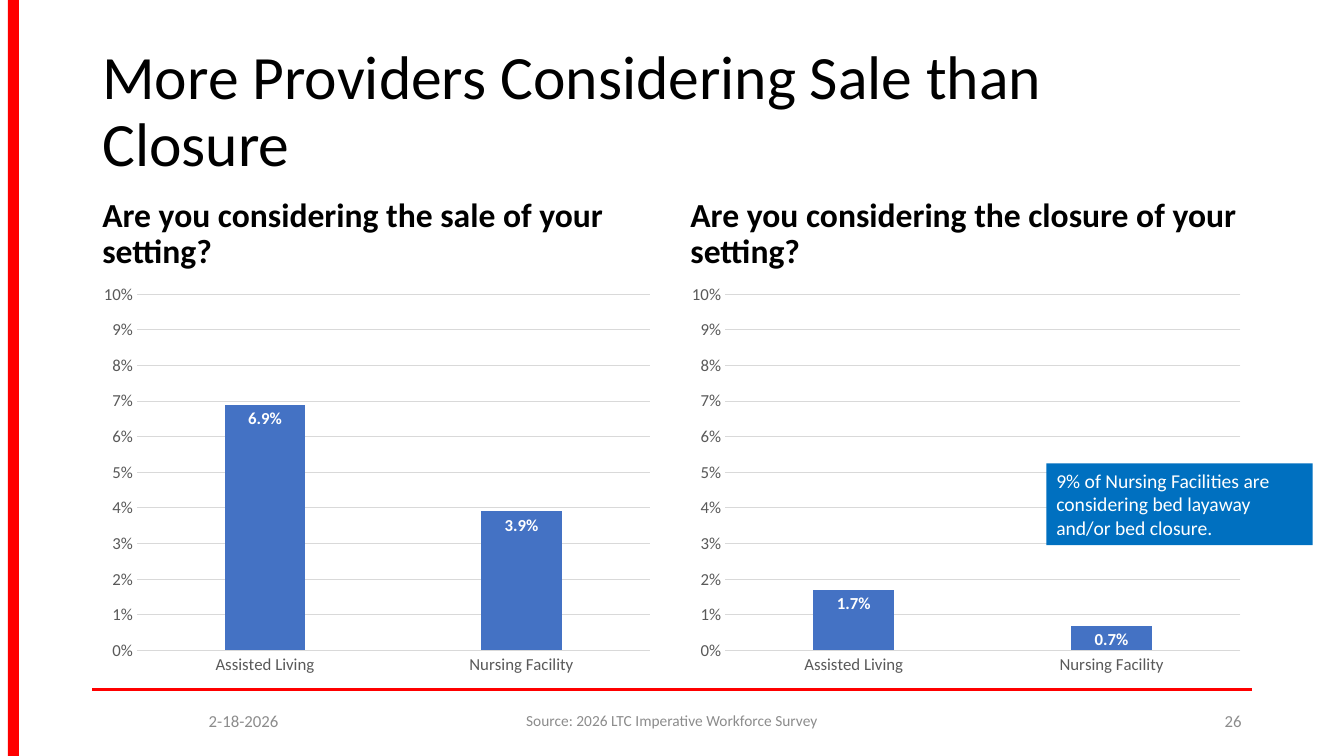
import dataclasses

import pptx
import pptx.chart.data
import pptx.dml.color
import pptx.enum.chart
import pptx.enum.shapes
import pptx.enum.text
import pptx.oxml.ns
import pptx.util
from lxml import etree

Cm = pptx.util.Cm
Pt = pptx.util.Pt
Align = pptx.enum.text.PP_ALIGN
Anchor = pptx.enum.text.MSO_ANCHOR

FONT = "Calibri"
MARGIN = 2.33
RIGHT_EDGE = 31.54
HEADING_TOP, HEADING_HEIGHT = 4.67, 2.29
CHART_HEIGHT = 10.24
FOOTER_TOP, FOOTER_HEIGHT = 17.65, 1.01


@dataclasses.dataclass
class Label:
    text: str
    left: float
    top: float
    width: float
    height: float
    size: float
    color: str = "000000"
    bold: bool = False
    align: Align = Align.LEFT
    anchor: Anchor = Anchor.MIDDLE
    line_spacing: float = 1.0


@dataclasses.dataclass
class Question:
    text: str
    left: float
    width: float
    shares: tuple[float, float]


QUESTIONS = [
    Question("Are you considering the sale of your setting?", MARGIN, 14.33, (0.069, 0.039)),
    Question("Are you considering the closure of your setting?", 17.15, 14.4, (0.017, 0.007)),
]

TITLE = Label("More Providers Considering Sale than Closure",
              MARGIN, 1.01, 29.21, 3.68, 44, line_spacing=0.9)

FOOTERS = [
    Label(text, left, FOOTER_TOP, width, FOOTER_HEIGHT, size, "8C8C8C", align=align)
    for text, left, width, size, align in [
        ("2-18-2026", MARGIN, 7.62, 12, Align.CENTER),
        ("Source: 2026 LTC Imperative Workforce Survey", 11.22, 11.43, 11, Align.CENTER),
        ("26", 23.92, 7.62, 12, Align.RIGHT),
    ]
]

CALLOUT = Label("9% of Nursing Facilities are considering bed layaway and/or bed closure.",
                26.37, 11.68, 6.71, 2.06, 14, "FFFFFF", anchor=Anchor.TOP)


def rgb(color: str) -> pptx.dml.color.RGBColor:
    return pptx.dml.color.RGBColor.from_string(color)


def style_font(font, size: float, color: str, bold: bool = False) -> None:
    font.name = FONT
    font.size = Pt(size)
    font.bold = bold
    font.color.rgb = rgb(color)


def style_line(line, color: str, width: float) -> None:
    line.color.rgb = rgb(color)
    line.width = Pt(width)


def write(frame, label: Label) -> None:
    frame.word_wrap = True
    frame.vertical_anchor = label.anchor
    paragraph = frame.paragraphs[0]
    paragraph.alignment = label.align
    paragraph.line_spacing = label.line_spacing
    run = paragraph.add_run()
    run.text = label.text
    style_font(run.font, label.size, label.color, label.bold)


def add_label(slide, label: Label) -> None:
    box = slide.shapes.add_textbox(
        Cm(label.left), Cm(label.top), Cm(label.width), Cm(label.height))
    write(box.text_frame, label)


def add_bar(slide, left: float, top: float, width: float, height: float, color: str):
    bar = slide.shapes.add_shape(
        pptx.enum.shapes.MSO_SHAPE.RECTANGLE, Cm(left), Cm(top), Cm(width), Cm(height))
    bar.shadow.inherit = False
    bar.fill.solid()
    bar.fill.fore_color.rgb = rgb(color)
    bar.line.fill.background()
    return bar


def add_footer_rule(slide) -> None:
    rule = slide.shapes.add_connector(
        pptx.enum.shapes.MSO_CONNECTOR.STRAIGHT,
        Cm(MARGIN), Cm(17.37), Cm(RIGHT_EDGE), Cm(17.37))
    style_line(rule.line, "FF0000", 2)
    etree.SubElement(rule._element.spPr, pptx.oxml.ns.qn("a:effectLst"))


def add_share_chart(slide, question: Question) -> None:
    shares = pptx.chart.data.CategoryChartData(number_format="0.0%")
    shares.categories = ["Assisted Living", "Nursing Facility"]
    shares.add_series("Series 1", question.shares)
    chart = slide.shapes.add_chart(
        pptx.enum.chart.XL_CHART_TYPE.COLUMN_CLUSTERED,
        Cm(question.left), Cm(HEADING_TOP + HEADING_HEIGHT),
        Cm(question.width), Cm(CHART_HEIGHT), shares).chart
    chart.has_title = False
    chart.has_legend = False
    style_font(chart.font, 10, "000000")

    for axis in (chart.category_axis, chart.value_axis):
        axis.major_tick_mark = pptx.enum.chart.XL_TICK_MARK.NONE
        axis.minor_tick_mark = pptx.enum.chart.XL_TICK_MARK.NONE
        style_font(axis.tick_labels.font, 12, "595959")
    style_line(chart.category_axis.format.line, "D9D9D9", 0.75)

    percent_axis = chart.value_axis
    percent_axis.minimum_scale = 0
    percent_axis.maximum_scale = 0.1
    percent_axis.major_unit = 0.01
    percent_axis.tick_labels.number_format = "0%"
    percent_axis.tick_labels.number_format_is_linked = False
    percent_axis.format.line.fill.background()
    style_line(percent_axis.major_gridlines.format.line, "D9D9D9", 0.75)

    plot = chart.plots[0]
    plot.gap_width = 219
    plot.overlap = -27
    plot.vary_by_categories = False
    columns = plot.series[0]
    columns.format.fill.solid()
    columns.format.fill.fore_color.rgb = rgb("4472C4")
    labels = columns.data_labels
    labels.show_value = True
    labels.position = pptx.enum.chart.XL_LABEL_POSITION.INSIDE_END
    labels.number_format = "0.0%"
    labels.number_format_is_linked = False
    style_font(labels.font, 12, "FFFFFF", True)


def main() -> None:
    deck = pptx.Presentation()
    deck.slide_width = Cm(33.87)
    deck.slide_height = Cm(19.05)
    slide = deck.slides.add_slide(deck.slide_layouts[6])

    add_footer_rule(slide)
    add_bar(slide, 0.2, 0, 0.28, 19.05, "FF0000")
    add_label(slide, TITLE)
    for question in QUESTIONS:
        add_label(slide, Label(
            question.text, question.left, HEADING_TOP, question.width, HEADING_HEIGHT,
            24, bold=True, anchor=Anchor.BOTTOM, line_spacing=0.9))
        add_share_chart(slide, question)
    for footer in FOOTERS:
        add_label(slide, footer)
    callout = add_bar(
        slide, CALLOUT.left, CALLOUT.top, CALLOUT.width, CALLOUT.height, "0070C0")
    write(callout.text_frame, CALLOUT)

    deck.save("out.pptx")


if __name__ == "__main__":
    main()
